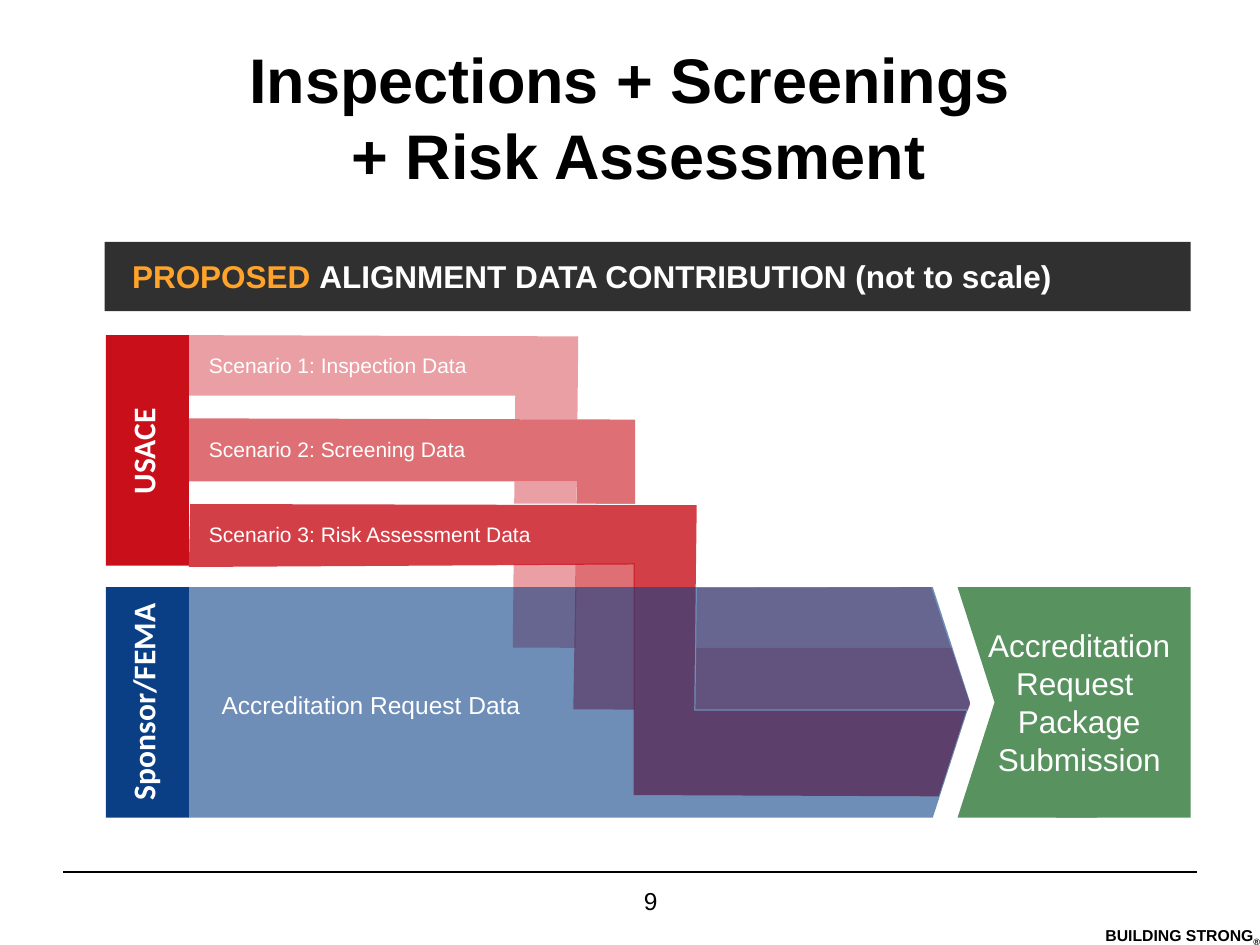
from dataclasses import dataclass

from lxml.etree import SubElement
from pptx import Presentation
from pptx.dml.color import RGBColor
from pptx.enum.shapes import MSO_CONNECTOR as Link
from pptx.enum.shapes import MSO_SHAPE as Shape
from pptx.enum.text import MSO_ANCHOR as Anchor
from pptx.enum.text import PP_ALIGN as Align
from pptx.oxml.ns import qn
from pptx.util import Inches, Pt

BLACK = RGBColor(0x00, 0x00, 0x00)
WHITE = RGBColor(0xFF, 0xFF, 0xFF)
RED = RGBColor(0xC9, 0x10, 0x1A)
BLUE = RGBColor(0x0B, 0x3F, 0x85)
GREEN = RGBColor(0x58, 0x92, 0x5F)
AMBER = RGBColor(0xFF, 0xA3, 0x2A)

Box = tuple[float, float, float, float]
Points = list[tuple[float, float]]


@dataclass
class Run:
    text: str
    size: int
    color: RGBColor = WHITE
    bold: bool = False
    font: str = "Arial"


@dataclass
class Label:
    box: Box
    lines: list[list[Run]]
    align: Align = Align.LEFT
    anchor: Anchor = Anchor.TOP
    turn: int = 0
    inset: bool = True


@dataclass
class Block:
    kind: Shape
    box: Box
    color: RGBColor
    alpha: int = 100
    adjust: float | None = None


@dataclass
class Band:
    points: Points
    alpha: int
    shift: tuple[float, float] | None = None


def paint(shape, color: RGBColor, alpha: int = 100) -> None:
    shape.shadow.inherit = False
    shape.line.fill.background()
    shape.fill.solid()
    shape.fill.fore_color.rgb = color
    if alpha < 100:
        tone = shape._element.spPr.find(qn("a:solidFill"))[0]
        SubElement(tone, qn("a:alpha")).set("val", str(alpha * 1000))


def add_run(para, item: Run):
    run = para.add_run()
    run.text = item.text
    font = run.font
    font.name, font.size, font.bold = item.font, Pt(item.size), item.bold
    font.color.rgb = item.color
    return run


def add_label(slide, label: Label):
    shape = slide.shapes.add_textbox(*map(Inches, label.box))
    shape.rotation = label.turn
    frame = shape.text_frame
    frame.word_wrap = True
    frame.vertical_anchor = label.anchor
    if not label.inset:
        frame.margin_left = frame.margin_right = 0
        frame.margin_top = frame.margin_bottom = 0
    for i, line in enumerate(label.lines):
        para = frame.add_paragraph() if i else frame.paragraphs[0]
        para.alignment = label.align
        for item in line:
            add_run(para, item)
    return shape


def add_block(slide, block: Block) -> None:
    shape = slide.shapes.add_shape(block.kind, *map(Inches, block.box))
    if block.adjust is not None:
        shape.adjustments[0] = block.adjust
    paint(shape, block.color, block.alpha)


def add_path(slide, points: Points, color: RGBColor, alpha: int = 100) -> None:
    spots = [(Inches(x), Inches(y)) for x, y in points]
    maker = slide.shapes.build_freeform(*spots[0], scale=1.0)
    maker.add_line_segments(spots[1:], close=True)
    paint(maker.convert_to_shape(), color, alpha)


def add_band(slide, band: Band) -> None:
    if band.shift:
        dx, dy = band.shift
        add_path(slide, [(x + dx, y + dy) for x, y in band.points], WHITE)
    add_path(slide, band.points, RED, band.alpha)


def add_title(slide) -> None:
    title = slide.shapes.title
    title.left, title.top = Inches(0.5), Inches(0.3)
    title.width, title.height = Inches(9), Inches(1.25)
    frame = title.text_frame
    frame.vertical_anchor = Anchor.MIDDLE
    para = frame.paragraphs[0]
    para.alignment = Align.CENTER
    add_run(para, Run("Inspections + Screenings", 36, BLACK, True))
    para.add_line_break()
    add_run(para, Run(" + Risk Assessment", 36, BLACK, True))


def add_footer(slide) -> None:
    rule = slide.shapes.add_connector(
        Link.STRAIGHT, Inches(0.5), Inches(6.92), Inches(9.5), Inches(6.92))
    rule.line.color.rgb = BLACK
    rule.line.width = Pt(0.75)
    SubElement(rule._element.spPr, qn("a:effectLst"))
    motto = [Run("BUILDING STRONG", 9, BLACK, True), Run("®", 9, BLACK, True)]
    shape = add_label(slide, Label((7.76, 7.35, 2.24, 0.24), [motto],
                                   Align.RIGHT, inset=False))
    mark = shape.text_frame.paragraphs[0].runs[1]
    mark._r.get_or_add_rPr().set("baseline", "-25000")
    add_label(slide, Label((4, 6.98, 2.33, 0.52), [[Run("9", 14, BLACK)]],
                           Align.CENTER))


BANDS = [
    Band([(1.5, 2.66), (4.59, 2.67), (4.57, 4.67), (7.39, 4.66), (7.55, 5.15),
          (4.07, 5.14), (4.09, 3.14), (1.49, 3.14)], 40),
    Band([(1.49, 3.32), (5.04, 3.33), (5.04, 5.14), (7.55, 5.14), (7.7, 5.59),
          (7.68, 5.64), (4.55, 5.63), (4.58, 3.82), (1.5, 3.82)], 60, (0.01, 0)),
    Band([(1.51, 4), (5.53, 4.01), (5.51, 5.64), (7.67, 5.64), (7.45, 6.32),
          (5.03, 6.31), (5.03, 4.48), (1.5, 4.5)], 80, (0.01, -0.01)),
]

ROW, TALL = 4.66, 1.83
BLOCKS = [
    Block(Shape.PENTAGON, (1.5, ROW, 6.2, TALL), BLUE, 59, 0.162),
    Block(Shape.RECTANGLE, (8.38, ROW, 1.07, TALL), GREEN),
    Block(Shape.CHEVRON, (7.6, ROW, 1.4, TALL), GREEN, adjust=0.21),
    Block(Shape.RECTANGLE, (0.84, 2.66, 0.66, TALL), RED),
    Block(Shape.RECTANGLE, (0.84, ROW, 0.66, TALL), BLUE),
    Block(Shape.RECTANGLE, (0.83, 1.92, 8.62, 0.55), BLACK, 81),
]

SIDES = [("USACE", 3.38), ("Sponsor/FEMA", 5.37)]
NOTES = [
    ("Scenario 1: Inspection Data", (1.56, 2.7, 3.28, 0.39), 12),
    ("Scenario 2: Screening Data", (1.56, 3.37, 4.06, 0.39), 12),
    ("Scenario 3: Risk Assessment Data", (1.56, 4.09, 4.06, 0.3), 12),
    ("Accreditation Request Data", (1.66, 5.36, 3.28, 0.46), 14),
]
LABELS = [
    *(Label((0.22, top, TALL, 0.4), [[Run(text, 18, WHITE, True, "Calibri")]],
            Align.CENTER, turn=270) for text, top in SIDES),
    *(Label(box, [[Run(text, size)]], anchor=Anchor.MIDDLE)
      for text, box, size in NOTES),
    Label((7.69, 4.92, 1.75, 1.31),
          [[Run("Accreditation Request ", 18)], [Run("Package Submission", 18)]],
          Align.CENTER),
    Label((0.95, 1.99, 7.97, 0.4),
          [[Run("PROPOSED ", 18, AMBER, True),
            Run("ALIGNMENT DATA CONTRIBUTION (not to scale)", 18, WHITE, True)]]),
]


def main() -> None:
    deck = Presentation()
    deck.slide_width, deck.slide_height = Inches(10), Inches(7.5)
    slide = deck.slides.add_slide(deck.slide_layouts[5])
    add_title(slide)
    add_footer(slide)
    for band in BANDS:
        add_band(slide, band)
    for block in BLOCKS:
        add_block(slide, block)
    for label in LABELS:
        add_label(slide, label)
    deck.save("out.pptx")


if __name__ == "__main__":
    main()
